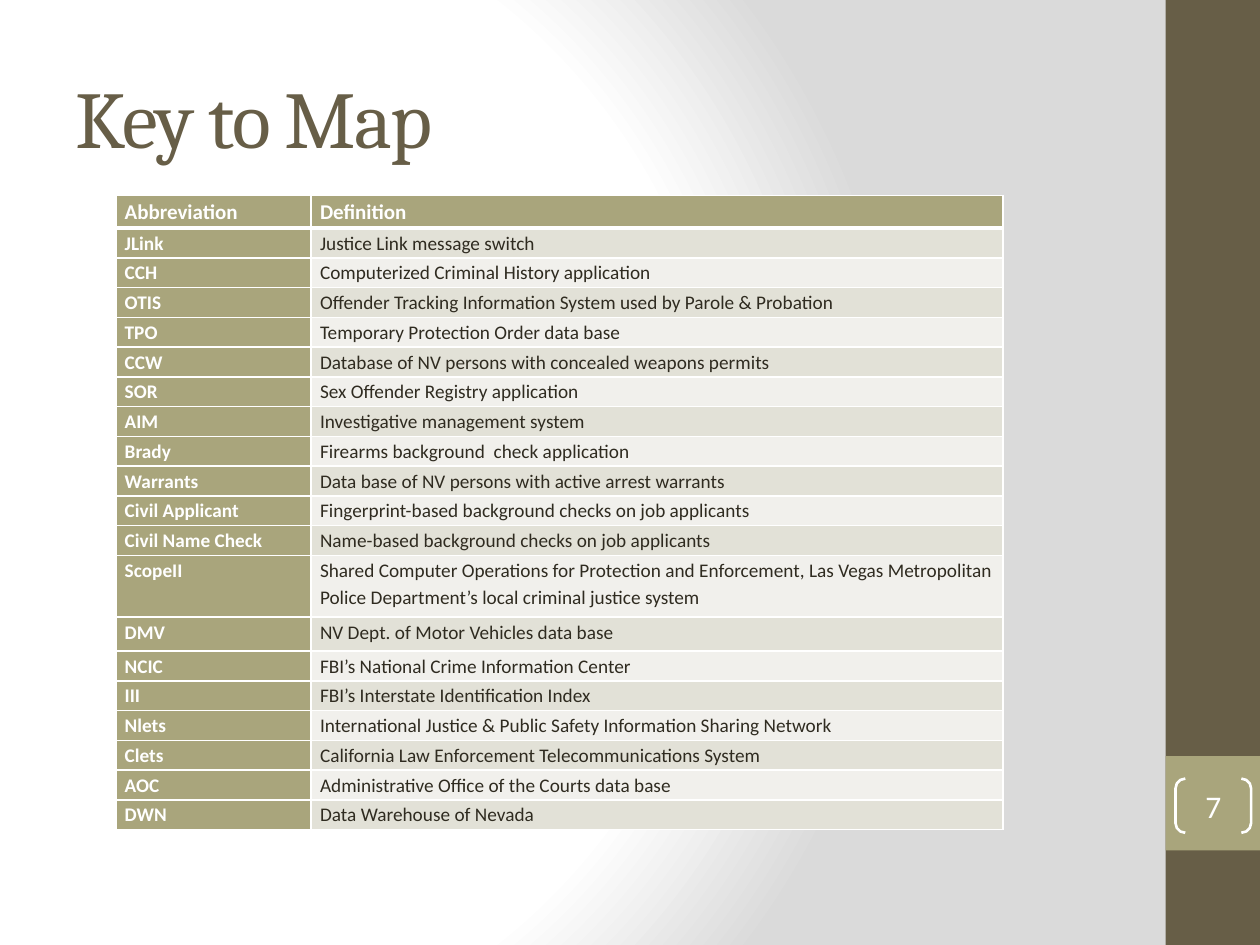
from dataclasses import dataclass

from pptx import Presentation
from pptx.dml.color import RGBColor
from pptx.enum import shapes, text
from pptx.oxml import parse_xml
from pptx.oxml.ns import nsdecls, qn
from pptx.util import Inches, Pt


@dataclass(frozen=True)
class Theme:
    brown: str = "675E47"
    olive: str = "A9A57C"
    ink: str = "2F2B20"
    white: str = "FFFFFF"
    grey: str = "DADADA"
    bands: tuple = ("E2E1D7", "F1F0EC")
    heading: str = "Cambria"
    body: str = "Calibri"
    title_size: int = 46
    number_size: int = 18
    header_size: int = 12
    cell_size: int = 11


THEME = Theme()

HEADER = ("Abbreviation", "Definition")
ENTRIES = [
    ("JLink", "Justice Link message switch"),
    ("CCH", "Computerized Criminal History application"),
    ("OTIS", "Offender Tracking Information System used by Parole & Probation"),
    ("TPO", "Temporary Protection Order data base"),
    ("CCW", "Database of NV persons with concealed weapons permits"),
    ("SOR", "Sex Offender Registry application"),
    ("AIM", "Investigative management system"),
    ("Brady", "Firearms background  check application"),
    ("Warrants", "Data base of NV persons with active arrest warrants"),
    ("Civil Applicant", "Fingerprint-based background checks on job applicants"),
    ("Civil Name Check", "Name-based background checks on job applicants"),
    ("ScopeII", "Shared Computer Operations for Protection and Enforcement, Las Vegas "
                "Metropolitan Police Department’s local criminal justice system"),
    ("DMV", "NV Dept. of Motor Vehicles data base"),
    ("NCIC", "FBI’s National Crime Information Center"),
    ("III", "FBI’s Interstate Identification Index"),
    ("Nlets", "International Justice & Public Safety Information Sharing Network"),
    ("Clets", "California Law Enforcement Telecommunications System"),
    ("AOC", "Administrative Office of the Courts data base"),
    ("DWN", "Data Warehouse of Nevada"),
]
SPECIAL_HEIGHTS = {"Abbreviation": 0.26, "ScopeII": 0.49, "DMV": 0.27}
ABBREVIATION_WIDTH = 1.55


def rgb(color):
    return RGBColor.from_string(color)


def inches(box):
    return [Inches(length) for length in box]


def add_span(para, words, size, color, font=THEME.body, bold=False):
    span = para.add_run()
    span.text = words
    span.font.size = Pt(size)
    span.font.name = font
    span.font.bold = bold
    span.font.color.rgb = rgb(color)
    return span


def paint_background(page):
    page.background.fill.solid()
    properties = page.element.find(".//" + qn("p:bgPr"))
    stops = "".join(
        f'<a:gs pos="{percent * 1000}"><a:srgbClr val="{color}"/></a:gs>'
        for percent, color in ((0, THEME.white), (75, THEME.white), (100, THEME.grey))
    )
    properties.replace(properties[0], parse_xml(
        f'<a:gradFill {nsdecls("a")} rotWithShape="1"><a:gsLst>{stops}</a:gsLst>'
        '<a:path path="circle"><a:fillToRect l="20000" t="50000" r="100000" b="50000"/>'
        '</a:path></a:gradFill>'
    ))


def add_block(page, box, color):
    block = page.shapes.add_shape(shapes.MSO_SHAPE.RECTANGLE, *inches(box))
    block.shadow.inherit = False
    block.fill.solid()
    block.fill.fore_color.rgb = rgb(color)
    block.line.fill.background()


def add_sidebar(page, box, number):
    left, top, width, height = box
    add_block(page, box, THEME.brown)
    add_block(page, (left, top + 6, width, width), THEME.olive)
    bracket = page.shapes.add_shape(
        shapes.MSO_SHAPE.DOUBLE_BRACKET, *inches((left + 0.08, top + 6.18, 0.6, 0.43)))
    bracket.shadow.inherit = False
    bracket.adjustments[0] = 0.18
    bracket.fill.background()
    bracket.line.color.rgb = rgb(THEME.white)
    bracket.line.width = Pt(1.5)
    frame = bracket.text_frame
    frame.margin_left = frame.margin_right = frame.margin_top = frame.margin_bottom = 0
    frame.vertical_anchor = text.MSO_ANCHOR.MIDDLE
    para = frame.paragraphs[0]
    para.alignment = text.PP_ALIGN.CENTER
    add_span(para, number, THEME.number_size, THEME.white)


def add_title(page, box, words):
    frame = page.shapes.add_textbox(*inches(box)).text_frame
    frame.word_wrap = True
    frame.vertical_anchor = text.MSO_ANCHOR.MIDDLE
    span = add_span(frame.paragraphs[0], words, THEME.title_size, THEME.brown, THEME.heading)
    span.font._element.set("spc", "-100")


def set_borders(cell, bottom):
    properties = cell._tc.get_or_add_tcPr()
    widths = {"lnL": 1, "lnR": 1, "lnT": 1, "lnB": bottom}
    for position, (side, width) in enumerate(widths.items()):
        properties.insert(position, parse_xml(
            f'<a:{side} {nsdecls("a")} w="{Pt(width)}"><a:solidFill>'
            f'<a:srgbClr val="{THEME.white}"/></a:solidFill></a:{side}>'
        ))


def fill_cell(cell, words, size, color, fill, bold, bottom):
    cell.margin_left = cell.margin_right = Inches(0.07)
    cell.margin_top = cell.margin_bottom = 0
    cell.fill.solid()
    cell.fill.fore_color.rgb = rgb(fill)
    set_borders(cell, bottom)
    para = cell.text_frame.paragraphs[0]
    para.line_spacing = 1.15
    add_span(para, words, size, color, bold=bold)


def add_key_table(page, box):
    rows = [HEADER, *ENTRIES]
    width, height = box[2:]
    table = page.shapes.add_table(len(rows), len(HEADER), *inches(box)).table
    table.horz_banding = False
    table.first_col = True
    table.columns[0].width = Inches(ABBREVIATION_WIDTH)
    table.columns[1].width = Inches(width - ABBREVIATION_WIDTH)
    plain_height = (height - sum(SPECIAL_HEIGHTS.values())) / (len(rows) - len(SPECIAL_HEIGHTS))
    for index, row in enumerate(rows):
        table.rows[index].height = Inches(SPECIAL_HEIGHTS.get(row[0], plain_height))
        is_header = index == 0
        size = THEME.header_size if is_header else THEME.cell_size
        for column, words in enumerate(row):
            strong = is_header or column == 0
            color = THEME.white if strong else THEME.ink
            fill = THEME.olive if strong else THEME.bands[(index - 1) % 2]
            fill_cell(table.cell(index, column), words, size, color, fill, strong,
                      bottom=3 if is_header else 1)
            if index == 1:
                top_line = table.cell(index, column)._tc.tcPr.find(qn("a:lnT"))
                top_line.set("w", str(Pt(3)))


def main():
    deck = Presentation()
    deck.slide_width, deck.slide_height = Inches(10), Inches(7.5)
    page = deck.slides.add_slide(deck.slide_layouts[6])
    paint_background(page)
    add_title(page, (0.5, 0.3, 8.33, 1.25), "Key to Map")
    add_key_table(page, (0.92, 1.55, 7.04, 5.04))
    add_sidebar(page, (9.25, 0, 0.75, 7.5), "7")
    deck.save("out.pptx")


if __name__ == "__main__":
    main()
